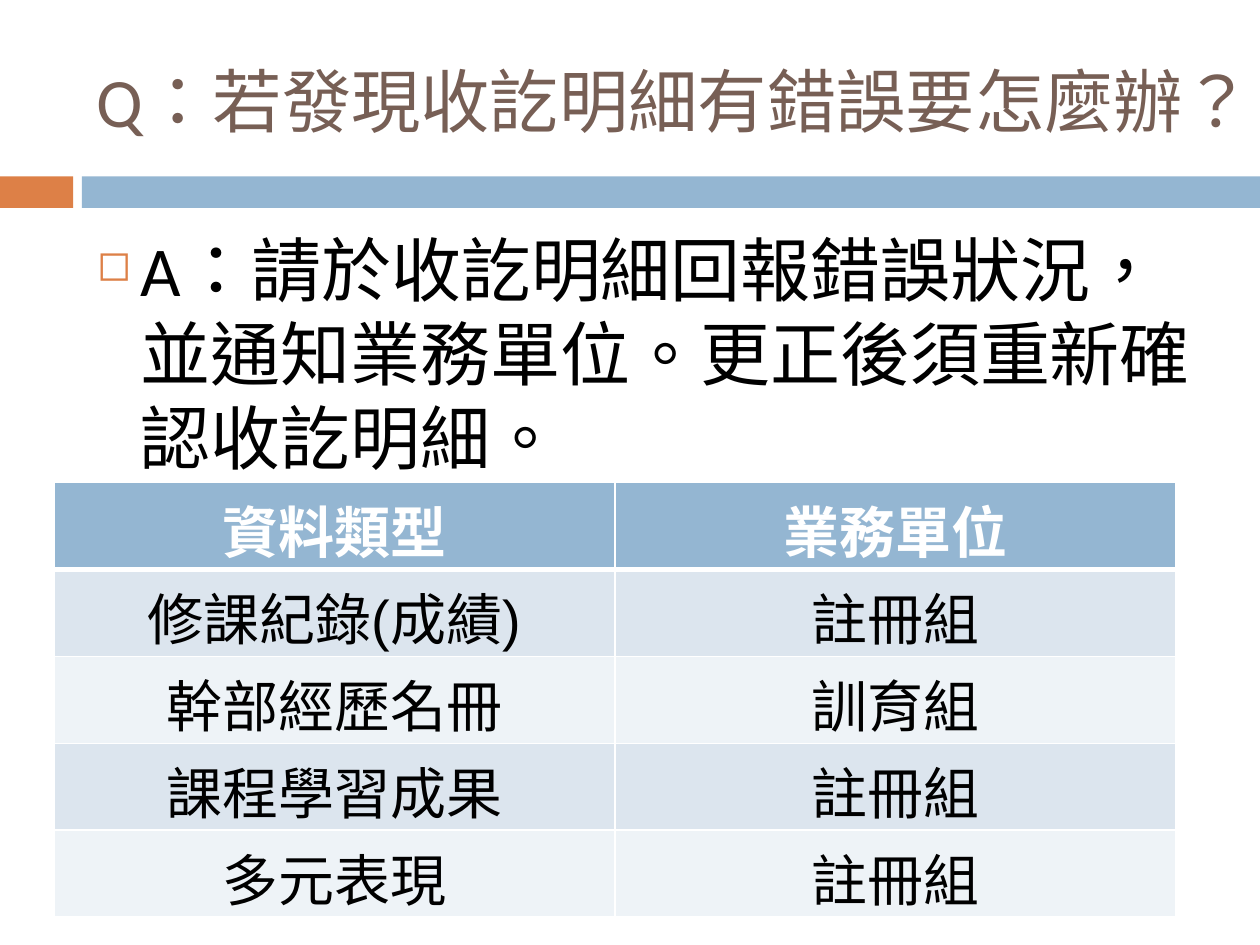
import pptx
import pptx.util
import pptx.dml.color
import pptx.enum.shapes
import pptx.enum.text
import pptx.oxml
import pptx.oxml.ns
from dataclasses import dataclass
from lxml import etree

Inches = pptx.util.Inches
Pt = pptx.util.Pt
Color = pptx.dml.color.RGBColor.from_string
Anchor = pptx.enum.text.MSO_ANCHOR
Align = pptx.enum.text.PP_ALIGN
qn = pptx.oxml.ns.qn


@dataclass(frozen=True)
class Theme:
    orange: str = "DD8047"
    blue: str = "94B6D2"
    brown: str = "775F55"
    black: str = "000000"
    white: str = "FFFFFF"
    bands: tuple = ("DCE5EE", "EEF3F7")
    title_size: float = 39.6
    body_size: float = 40
    table_size: float = 32


theme = Theme()


def write_text(frame, text, *, size, color, font="Calibri", bold=False, align=Align.LEFT):
    frame.word_wrap = True
    para = frame.paragraphs[0]
    para.alignment = align
    span = para.add_run()
    span.text = text
    span.font.size = Pt(size)
    span.font.name = font
    span.font.bold = bold
    span.font.color.rgb = Color(color)
    span._r.get_or_add_rPr().set("lang", "zh-TW")
    return para


def add_border(cell, side, width):
    line = etree.SubElement(cell._tc.get_or_add_tcPr(), qn(f"a:ln{side}"), w=str(Pt(width)))
    fill = etree.SubElement(line, qn("a:solidFill"))
    etree.SubElement(fill, qn("a:srgbClr"), val=theme.white)


deck = pptx.Presentation()
deck.slide_width = Inches(10)
deck.slide_height = Inches(7.5)
page = deck.slides.add_slide(deck.slide_layouts[6])

for left, width, color in ((0, 0.58, theme.orange), (0.65, 9.35, theme.blue)):
    bar = page.shapes.add_shape(
        pptx.enum.shapes.MSO_SHAPE.RECTANGLE,
        Inches(left), Inches(1.4), Inches(width), Inches(0.25),
    )
    bar.shadow.inherit = False
    bar.fill.solid()
    bar.fill.fore_color.rgb = Color(color)
    bar.line.fill.background()

title_box = page.shapes.add_textbox(Inches(0.67), Inches(0.25), Inches(8.92), Inches(1.08))
title_box.text_frame.vertical_anchor = Anchor.MIDDLE
write_text(title_box.text_frame, "Q：若發現收訖明細有錯誤要怎麼辦？",
           size=theme.title_size, color=theme.brown)

answer_box = page.shapes.add_textbox(Inches(0.67), Inches(1.75), Inches(8.92), Inches(4.92))
answer = write_text(
    answer_box.text_frame,
    "A：請於收訖明細回報錯誤狀況，並通知業務單位。更正後須重新確認收訖明細。",
    size=theme.body_size, color=theme.black,
)
answer.space_before = Pt(7)
layout = answer._p.get_or_add_pPr()
layout.set("marL", str(Inches(0.35)))
layout.set("indent", str(Inches(-0.35)))
bullet_color = etree.SubElement(layout, qn("a:buClr"))
etree.SubElement(bullet_color, qn("a:srgbClr"), val=theme.orange)
etree.SubElement(layout, qn("a:buSzPct"), val="60000")
etree.SubElement(layout, qn("a:buChar"), char="◻")

rows = (
    ("資料類型", "業務單位"),
    ("修課紀錄(成績)", "註冊組"),
    ("幹部經歷名冊", "訓育組"),
    ("課程學習成果", "註冊組"),
    ("多元表現", "註冊組"),
)
table = page.shapes.add_table(
    len(rows), 2, Inches(0.43), Inches(3.83), Inches(8.9), Inches(0.69 * len(rows))
).table
for row_index, row in enumerate(rows):
    header = row_index == 0
    for column_index, text in enumerate(row):
        cell = table.cell(row_index, column_index)
        write_text(cell.text_frame, text, size=theme.table_size, font="Arial", bold=header,
                   color=theme.white if header else theme.black, align=Align.CENTER)
        for side in "LRTB":
            thick = (header and side == "B") or (row_index == 1 and side == "T")
            add_border(cell, side, 3 if thick else 1)
        cell.fill.solid()
        cell.fill.fore_color.rgb = Color(theme.blue if header else theme.bands[(row_index - 1) % 2])

deck.save("out.pptx")
